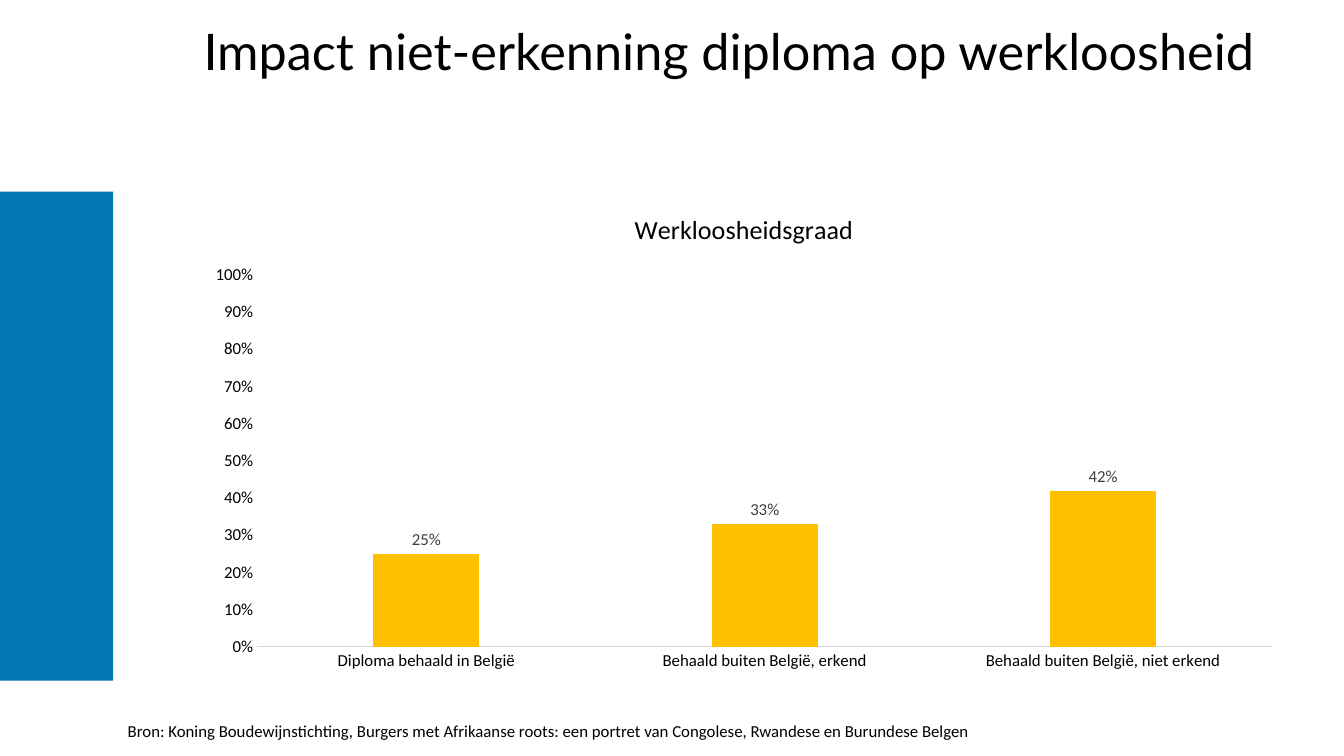
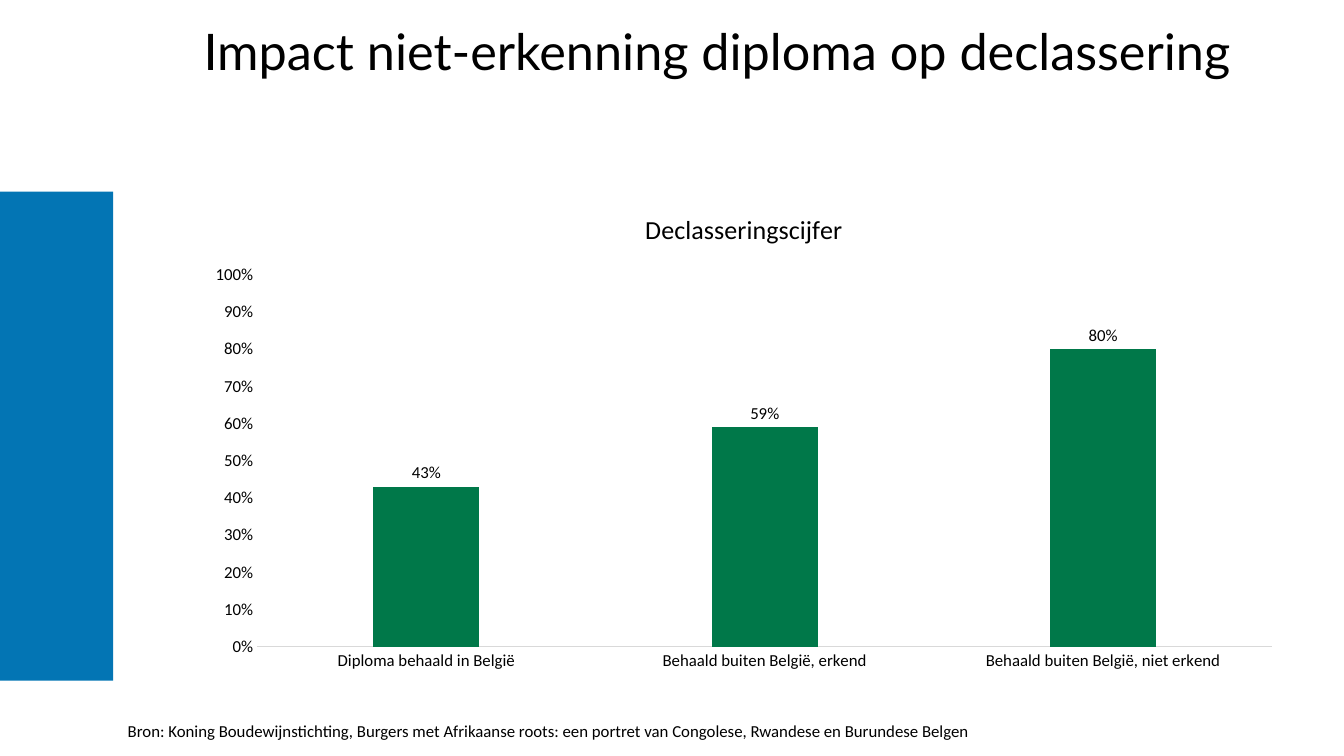
"""Build two slides on how diploma recognition affects work."""
import pptx
import pptx.chart.data
import pptx.dml.color
import pptx.enum.chart
import pptx.enum.shapes
import pptx.enum.text
import pptx.util

Cm = pptx.util.Cm
Pt = pptx.util.Pt

SLIDE_SIZE = (33.87, 19.05)
BAND_BOX = (0, 4.83, 2.85, 12.32)
TITLE_BOX = (4.88, 0, 27.79, 2.74)
CHART_BOX = (4.88, 4.83, 27.74, 12.32)
SOURCE_BOX = (2.97, 18.03, 29.64, 0.76)

BLACK, BLUE, AXIS_GREY = "000000", "0375B4", "D9D9D9"
TITLE_FONT = {"name": "Lato", "size": Pt(36), "bold": False}
CHART_TITLE_FONT = {"name": "Calibri", "size": Pt(18.6), "bold": False}
BODY_FONT = {"name": "Calibri", "size": Pt(12), "bold": False}

SOURCE = ("Bron: Koning Boudewijnstichting, Burgers met Afrikaanse roots: "
          "een portret van Congolese, Rwandese en Burundese Belgen")
CATEGORIES = ("Diploma behaald in België", "Behaald buiten België, erkend",
              "Behaald buiten België, niet erkend")
SLIDES = (
    {"title": "Impact niet-erkenning diploma op werkloosheid",
     "measure": "Werkloosheidsgraad", "values": (0.25, 0.33, 0.42),
     "bar_color": "FFC000", "label_color": "404040"},
    {"title": "Impact niet-erkenning diploma op declassering",
     "measure": "Declasseringscijfer", "values": (0.43, 0.59, 0.8),
     "bar_color": "007849", "label_color": BLACK},
)


def set_values(target, values):
    """Set each attribute named in a dict of format values."""
    for name, value in values.items():
        setattr(target, name, value)


def set_color(color_format, hex_color):
    """Give a colour format the colour of a hex string."""
    color_format.rgb = pptx.dml.color.RGBColor.from_string(hex_color)


def set_fill(fill, hex_color):
    """Make a fill solid in one colour."""
    fill.solid()
    set_color(fill.fore_color, hex_color)


def set_font(font, values, hex_color=BLACK):
    """Apply format values and a colour to a font."""
    set_values(font, values)
    set_color(font.color, hex_color)


def add_band(slide, box):
    """Draw the coloured band at the left edge."""
    shape = slide.shapes.add_shape(
        pptx.enum.shapes.MSO_SHAPE.RECTANGLE, *map(Cm, box))
    shape.shadow.inherit = False
    set_fill(shape.fill, BLUE)
    shape.line.fill.background()


def add_text(slide, box, text, font_values, frame_values, line_spacing=1.0):
    """Place one paragraph of text in a box."""
    frame = slide.shapes.add_textbox(*map(Cm, box)).text_frame
    set_values(frame, {"word_wrap": True, **frame_values})
    paragraph = frame.paragraphs[0]
    paragraph.line_spacing = line_spacing
    run = paragraph.add_run()
    run.text = text
    set_font(run.font, font_values)


def format_axes(chart):
    """Style the category axis and the percentage axis."""
    for axis in (chart.category_axis, chart.value_axis):
        set_values(axis, {
            "has_major_gridlines": False,
            "major_tick_mark": pptx.enum.chart.XL_TICK_MARK.NONE,
            "minor_tick_mark": pptx.enum.chart.XL_TICK_MARK.NONE})
        set_font(axis.tick_labels.font, BODY_FONT)
    set_fill(chart.category_axis.format.line.fill, AXIS_GREY)
    chart.category_axis.format.line.width = Pt(0.75)
    chart.value_axis.format.line.fill.background()
    set_values(chart.value_axis, {
        "minimum_scale": 0, "maximum_scale": 1, "major_unit": 0.1})
    set_values(chart.value_axis.tick_labels, {
        "number_format": "0%", "number_format_is_linked": False})


def add_bar_chart(slide, box, measure, values, bar_color, label_color):
    """Place a column chart of one measure in a box."""
    data = pptx.chart.data.CategoryChartData(number_format="0%")
    data.categories = CATEGORIES
    data.add_series(measure, values)
    chart = slide.shapes.add_chart(
        pptx.enum.chart.XL_CHART_TYPE.COLUMN_CLUSTERED,
        *map(Cm, box), data).chart
    set_values(chart, {"has_legend": False, "has_title": True})
    set_font(chart.font, BODY_FONT)
    chart.chart_title.include_in_layout = False
    paragraph = chart.chart_title.text_frame.paragraphs[0]
    run = paragraph.add_run()
    run.text = measure
    set_font(run.font, CHART_TITLE_FONT)
    format_axes(chart)

    plot = chart.plots[0]
    set_values(plot, {"gap_width": 219, "overlap": -27,
                      "vary_by_categories": False, "has_data_labels": True})
    set_values(plot.data_labels, {
        "show_value": True, "number_format": "0%",
        "number_format_is_linked": False,
        "position": pptx.enum.chart.XL_LABEL_POSITION.OUTSIDE_END})
    set_font(plot.data_labels.font, BODY_FONT, label_color)
    set_fill(plot.series[0].format.fill, bar_color)


def add_chart_slide(presentation, title, **chart_values):
    """Add a slide with band, title, chart and source line."""
    slide = presentation.slides.add_slide(presentation.slide_layouts[6])
    add_band(slide, BAND_BOX)
    add_text(slide, TITLE_BOX, title, TITLE_FONT,
             {"vertical_anchor": pptx.enum.text.MSO_ANCHOR.MIDDLE}, 0.9)
    add_bar_chart(slide, CHART_BOX, **chart_values)
    add_text(slide, SOURCE_BOX, SOURCE, BODY_FONT,
             {"auto_size": pptx.enum.text.MSO_AUTO_SIZE.SHAPE_TO_FIT_TEXT})


def main():
    """Build and save the presentation."""
    presentation = pptx.Presentation()
    presentation.slide_width, presentation.slide_height = map(Cm, SLIDE_SIZE)
    for content in SLIDES:
        add_chart_slide(presentation, **content)
    presentation.save("out.pptx")


if __name__ == "__main__":
    main()
